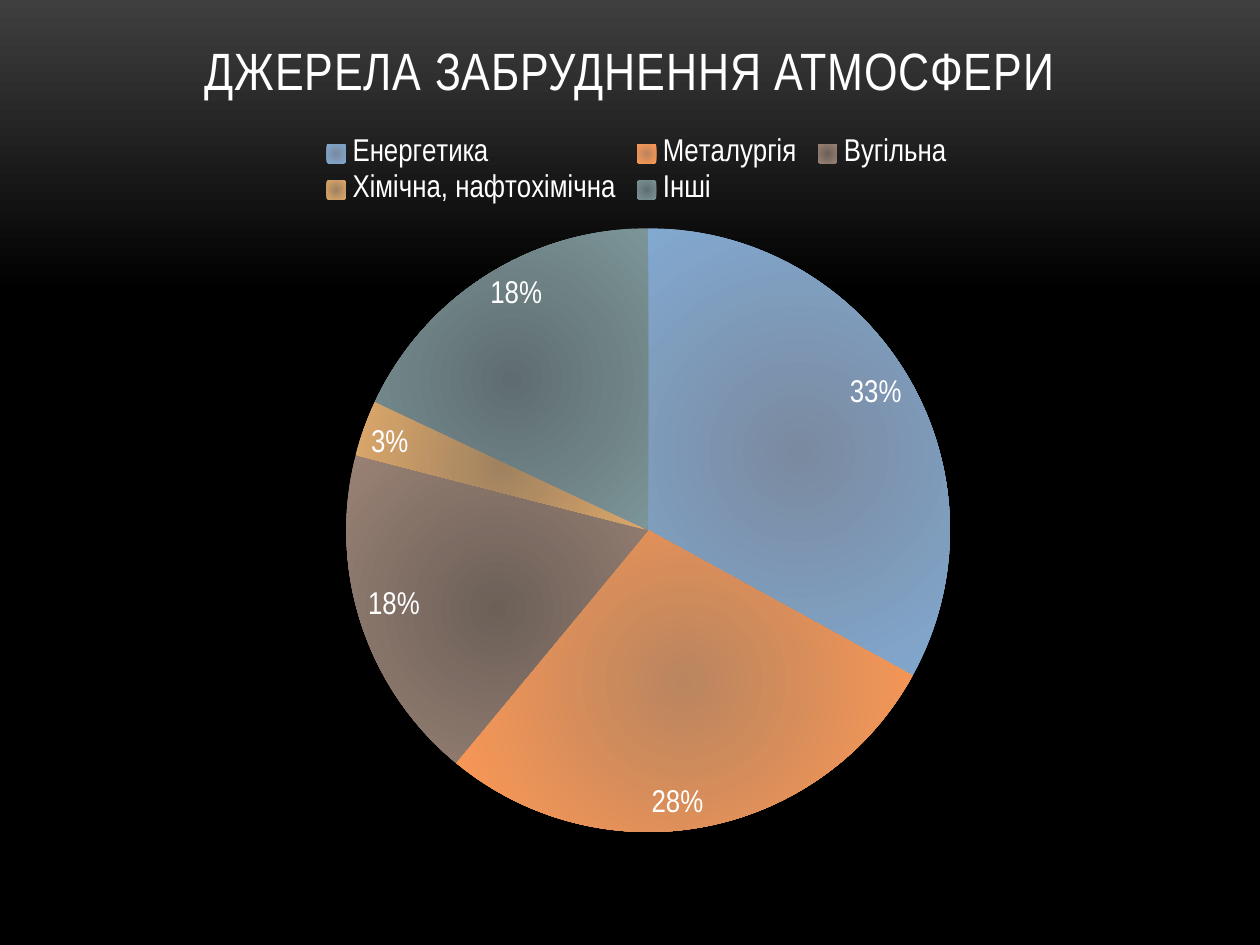
from typing import NamedTuple

from lxml import etree
from pptx import Presentation
from pptx.chart.data import CategoryChartData
from pptx.dml.color import RGBColor
from pptx.enum.chart import XL_CHART_TYPE, XL_LABEL_POSITION, XL_LEGEND_POSITION
from pptx.enum.text import MSO_ANCHOR, PP_ALIGN
from pptx.oxml import parse_xml
from pptx.oxml.ns import nsdecls, qn
from pptx.util import Inches, Pt

PIE = XL_CHART_TYPE.PIE
INSIDE_END = XL_LABEL_POSITION.INSIDE_END
TOP = XL_LEGEND_POSITION.TOP
BOTTOM = MSO_ANCHOR.BOTTOM
CENTER = PP_ALIGN.CENTER

W, H = Inches(10), Inches(7.5)
FONT = "Arial Narrow"
COLORS = {"text": "FFFFFF", "bg_top": "3F3F3F", "bg": "000000"}


class Box(NamedTuple):
    """Place and size as shares of the surrounding area."""
    x: float
    y: float
    w: float
    h: float


class Sector(NamedTuple):
    name: str
    share: int
    inner: str
    outer: str


TITLE_BOX = Box(0.012, 0.028, 0.976, 0.085)
CHART_BOX = Box(0.02, 0.132, 0.961, 0.767)
PLOT_BOX = Box(0.265, 0.143, 0.499, 0.833)
LEGEND_BOX = Box(0.24, 0.01, 0.53, 0.11)

SECTORS = [
    Sector("Енергетика", 33, "7A8AA0", "82A9D0"),
    Sector("Металургія", 28, "BA855F", "FF9955"),
    Sector("Вугільна", 18, "6C6058", "9A8275"),
    Sector("Хімічна, нафтохімічна", 3, "A08260", "DDA86A"),
    Sector("Інші", 18, "5F6D70", "7C9598"),
]


def on_slide(box: Box) -> tuple:
    return int(box.x * W), int(box.y * H), int(box.w * W), int(box.h * H)


def style_font(font, size: int) -> None:
    for name, value in {"name": FONT, "size": Pt(size), "bold": False}.items():
        setattr(font, name, value)
    font.color.rgb = RGBColor.from_string(COLORS["text"])


def radial_fill(point, sector: Sector) -> None:
    """Fill a pie slice with a gradient running from its middle outwards."""
    point.format.fill.gradient()
    old = point.format.fill._xPr.find(qn("a:gradFill"))
    new = parse_xml(
        f'<a:gradFill {nsdecls("a")} rotWithShape="1"><a:gsLst>'
        f'<a:gs pos="0"><a:srgbClr val="{sector.inner}"/></a:gs>'
        f'<a:gs pos="100000"><a:srgbClr val="{sector.outer}"/></a:gs></a:gsLst>'
        '<a:path path="circle"><a:fillToRect l="50000" t="50000" r="50000" b="50000"/>'
        '</a:path></a:gradFill>')
    old.getparent().replace(old, new)


def manual_layout(parent, box: Box, after: str = "", inner: bool = False) -> None:
    """Fix the place of a chart part inside the chart area."""
    for old in parent.findall(qn("c:layout")):
        parent.remove(old)
    layout = etree.Element(qn("c:layout"))
    manual = etree.SubElement(layout, qn("c:manualLayout"))
    values = {"layoutTarget": "inner"} if inner else {}
    values.update(xMode="edge", yMode="edge", **box._asdict())
    for tag, value in values.items():
        etree.SubElement(manual, qn(f"c:{tag}")).set("val", str(value))
    if after:
        parent.find(qn(after)).addnext(layout)
    else:
        parent.insert(0, layout)


def add_title(s, text: str) -> None:
    tf = s.shapes.add_textbox(*on_slide(TITLE_BOX)).text_frame
    tf.word_wrap = True
    tf.vertical_anchor = BOTTOM
    p = tf.paragraphs[0]
    p.alignment = CENTER
    r = p.add_run()
    r.text = text
    style_font(r.font, 30)
    r.font._element.set("spc", "50")


def add_pie(s, sectors: list[Sector]) -> None:
    data = CategoryChartData()
    data.categories = [sector.name for sector in sectors]
    data.add_series("Series 1", [sector.share for sector in sectors])
    chart = s.shapes.add_chart(PIE, *on_slide(CHART_BOX), data).chart
    style_font(chart.font, 18)
    chart.has_title = False
    chart.has_legend = True
    chart.legend.position = TOP
    chart.legend.include_in_layout = False

    # Slices and percentages
    plot = chart.plots[0]
    plot.vary_by_categories = True
    for i, sector in enumerate(sectors):
        radial_fill(plot.series[0].points[i], sector)
    plot.has_data_labels = True
    labels = plot.data_labels
    for name, value in {"show_percentage": True, "show_value": False,
                        "number_format": "0%", "number_format_is_linked": False,
                        "position": INSIDE_END}.items():
        setattr(labels, name, value)
    style_font(labels.font, 18)

    manual_layout(plot._element.getparent(), PLOT_BOX, inner=True)
    manual_layout(chart.legend._element, LEGEND_BOX, after="c:legendPos")


def main() -> None:
    prs = Presentation()
    prs.slide_width, prs.slide_height = W, H
    s = prs.slides.add_slide(prs.slide_layouts[6])

    # Background fading from grey to black
    fill = s.background.fill
    fill.gradient()
    fill.gradient_angle = 270
    for stop, key, position in zip(fill.gradient_stops, ("bg_top", "bg"), (0, 0.31)):
        stop.color.rgb = RGBColor.from_string(COLORS[key])
        stop.position = position

    add_title(s, "ДЖЕРЕЛА ЗАБРУДНЕННЯ АТМОСФЕРИ")
    add_pie(s, SECTORS)
    prs.save("out.pptx")


if __name__ == "__main__":
    main()
